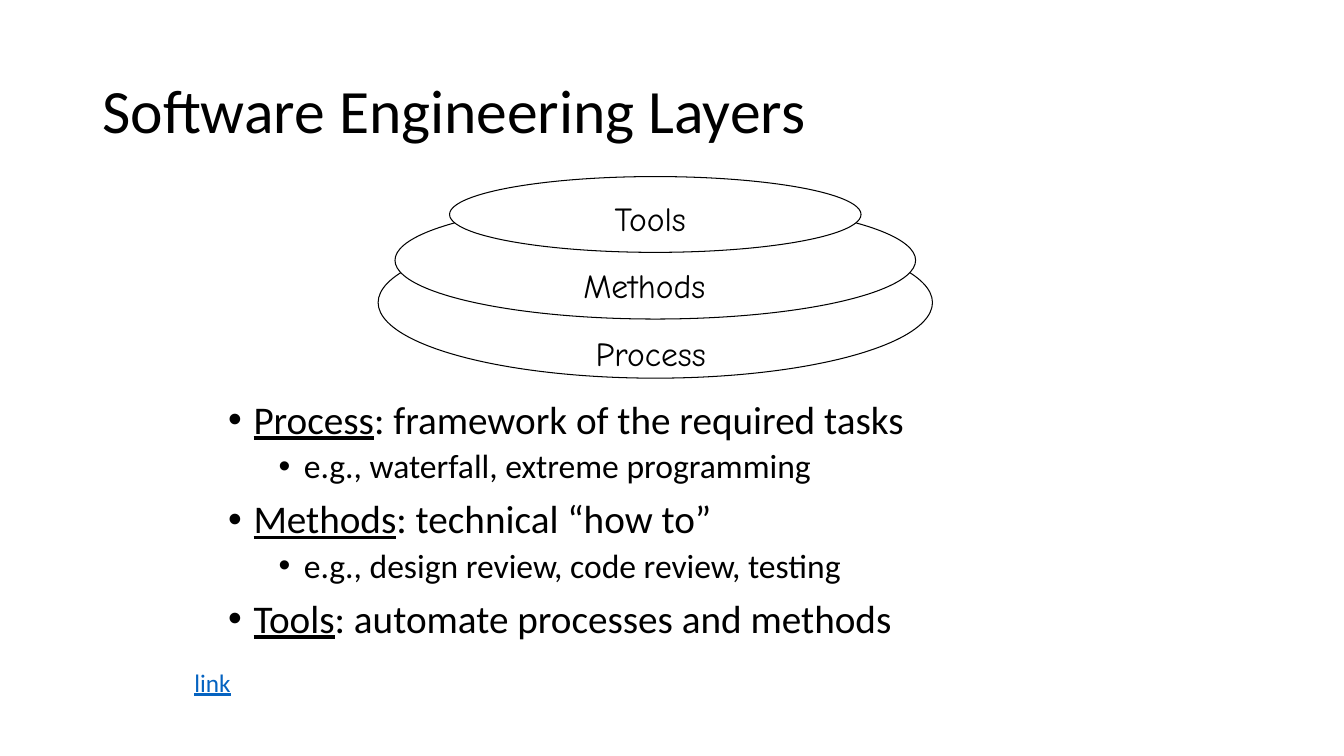
from collections import namedtuple

from lxml.etree import SubElement
from pptx import Presentation
from pptx.dml.color import RGBColor
from pptx.enum.shapes import MSO_SHAPE
from pptx.enum.text import MSO_ANCHOR
from pptx.oxml.ns import qn
from pptx.util import Cm, Pt

Box = namedtuple("Box", "left top width height")

SLIDE_WIDTH, SLIDE_HEIGHT = 33.87, 19.05
BODY_FONT, LABEL_FONT = "Calibri", "Comic Neue"
BLACK, WHITE, LINK_BLUE = "000000", "FFFFFF", "0563C1"

# Back to front: name, offset from the diagram's top, width, height, fill, label offset
LAYERS = [
    ("Process", 1.27, 13.97, 3.81, None, 5.23),
    ("Methods", 0.63, 13.12, 2.96, WHITE, 4.92),
    ("Tools", 0, 10.37, 1.91, WHITE, 5.71),
]
LABEL_TOP, LABEL_STEP = 3.81, 1.7

# Term, explanation, example
DEFINITIONS = [
    ("Process", ": framework of the required tasks", "e.g., waterfall, extreme programming"),
    ("Methods", ": technical “how to”", "e.g., design review, code review, testing"),
    ("Tools", ": automate processes and methods", None),
]


def color(hex_code):
    return RGBColor.from_string(hex_code)


def place(box):
    return [Cm(length) for length in box]


def add_run(paragraph, text, size=18, font=BODY_FONT, fill=BLACK, underline=False):
    run = paragraph.add_run()
    run.text = text
    run.font.size = Pt(size)
    run.font.name = font
    run.font.color.rgb = color(fill)
    run.font.underline = underline


def add_frame(slide, box, anchor=MSO_ANCHOR.TOP):
    frame = slide.shapes.add_textbox(*place(box)).text_frame
    frame.word_wrap = True
    frame.vertical_anchor = anchor
    return frame


def add_text(slide, box, text, anchor=MSO_ANCHOR.TOP, line_spacing=1.0, **run_format):
    paragraph = add_frame(slide, box, anchor).paragraphs[0]
    paragraph.line_spacing = line_spacing
    add_run(paragraph, text, **run_format)


def format_bullet(paragraph, level):
    paragraph.level = level
    paragraph.line_spacing = 0.9
    paragraph.space_before = Pt(5 if level else 10)
    properties = paragraph._p.get_or_add_pPr()
    properties.set("marL", str(Cm(0.64 + 1.27 * level)))
    properties.set("indent", str(-Cm(0.64)))
    SubElement(properties, qn("a:buFont"), typeface="Arial")
    SubElement(properties, qn("a:buChar"), char="•")


def add_layer_diagram(slide, box):
    """Stack the ellipses on a common vertical axis, each with its label."""
    for index, (name, top, width, height, fill, label_left) in enumerate(LAYERS):
        left = box.left + (box.width - width) / 2
        layer = slide.shapes.add_shape(
            MSO_SHAPE.OVAL, *place(Box(left, box.top + top, width, height)))
        layer.shadow.inherit = False
        layer.line.color.rgb = color(BLACK)
        layer.line.width = Pt(0.75)
        if fill:
            layer.fill.solid()
            layer.fill.fore_color.rgb = color(fill)
        else:
            layer.fill.background()
        label_top = box.top + LABEL_TOP - index * LABEL_STEP
        add_text(slide, Box(box.left + label_left, label_top, 4, 1.27), name,
                 size=24, font=LABEL_FONT)


def add_definitions(slide, box):
    frame = add_frame(slide, box)
    paragraph = frame.paragraphs[0]
    for index, (term, explanation, example) in enumerate(DEFINITIONS):
        if index:
            paragraph = frame.add_paragraph()
        format_bullet(paragraph, 0)
        add_run(paragraph, term, size=28, underline=True)
        add_run(paragraph, explanation, size=28)
        if example:
            paragraph = frame.add_paragraph()
            format_bullet(paragraph, 1)
            add_run(paragraph, example, size=24)


def main():
    deck = Presentation()
    deck.slide_width, deck.slide_height = Cm(SLIDE_WIDTH), Cm(SLIDE_HEIGHT)
    slide = deck.slides.add_slide(deck.slide_layouts[6])
    add_text(slide, Box(2.33, 1.02, 29.21, 3.68), "Software Engineering Layers",
             anchor=MSO_ANCHOR.MIDDLE, line_spacing=0.9, size=44)
    add_definitions(slide, Box(5.5, 9.96, 23.07, 6.35))
    add_layer_diagram(slide, Box(9.53, 4.45, 13.97, 5.08))
    add_text(slide, Box(4.65, 16.68, 10.11, 1.02), "link", fill=LINK_BLUE, underline=True)
    deck.save("out.pptx")


if __name__ == "__main__":
    main()
